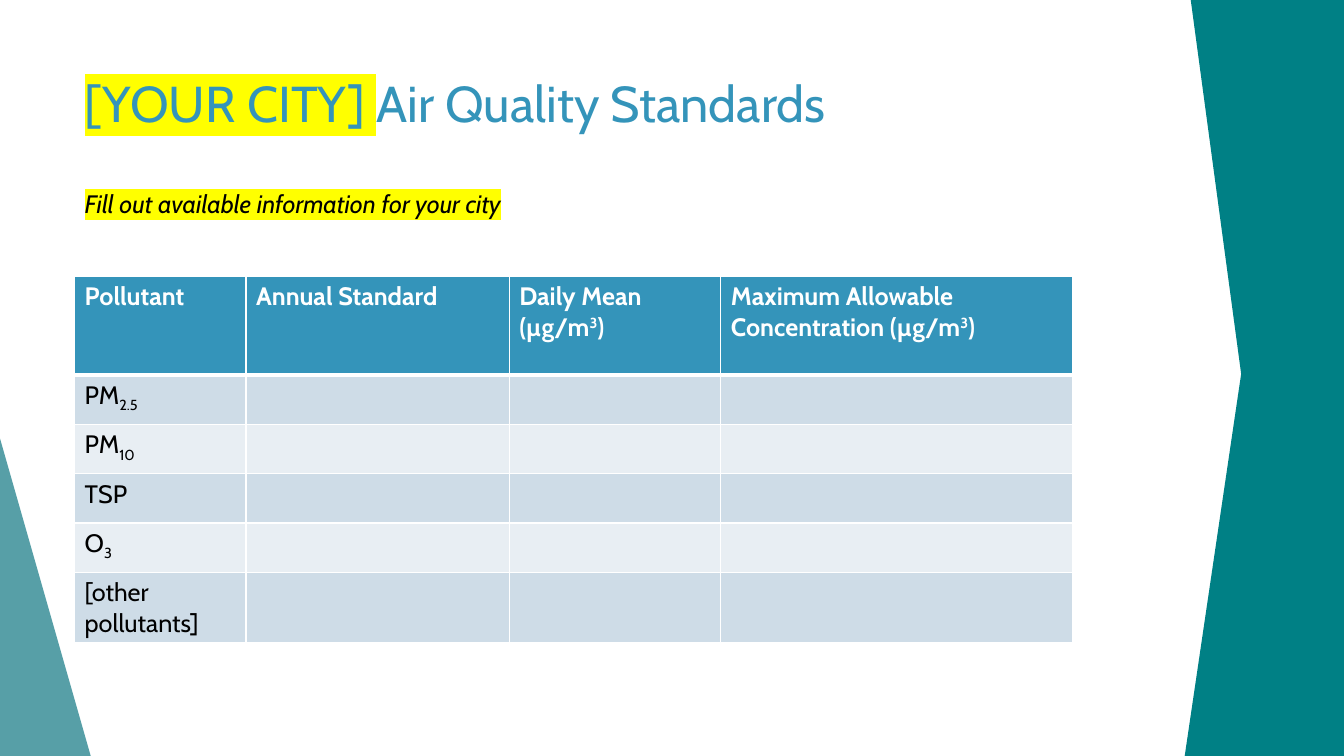
from lxml.etree import SubElement
from pptx import Presentation
from pptx.dml.color import RGBColor
from pptx.enum.shapes import MSO_SHAPE
from pptx.enum.text import MSO_ANCHOR, MSO_AUTO_SIZE, PP_ALIGN
from pptx.oxml.ns import qn
from pptx.util import Inches, Pt

COLORS = {"blue": "3494BA", "teal": "008085", "sea": "3A8F98", "white": "FFFFFF",
          "black": "000000", "yellow": "FFFF00", "dark_band": "CEDCE7",
          "light_band": "E8EEF3"}
FONT = "Cabin"
WIDTH, HEIGHT = 13.33, 7.5
MARGIN = 0.74
SUPER, SUB = 30, -25
COLUMNS = [1.7, 2.61, 2.1, 3.49]
HEADER_HEIGHT, ROW_HEIGHT = 0.98, 0.49
HEADERS = [
    [("Pollutant", 0)],
    [("Annual Standard", 0)],
    [("Daily Mean (µg/m", 0), ("3", SUPER), (")", 0)],
    [("Maximum Allowable Concentration (µg/m", 0), ("3", SUPER), (")", 0)],
]
POLLUTANTS = [
    [("PM", 0), ("2.5", SUB)],
    [("PM", 0), ("10", SUB)],
    [("TSP", 0)],
    [("O", 0), ("3", SUB)],
    [("[other pollutants]", 0)],
]


def color(name):
    return RGBColor.from_string(COLORS[name])


def add_span(para, text, size, ink, bold=False, italic=False, mark=None, baseline=0):
    span = para.add_run()
    span.text = text
    font = span.font
    font.size, font.bold, font.italic = Pt(size), bold, italic
    font.color.rgb = color(ink)
    properties = span._r.get_or_add_rPr()
    if mark:
        highlight = SubElement(properties, qn("a:highlight"))
        SubElement(highlight, qn("a:srgbClr"), val=COLORS[mark])
    if baseline:
        properties.set("baseline", str(baseline * 1000))
    font.name = FONT


def paint(shape, name, opacity=100):
    shape.shadow.inherit = False
    shape.fill.solid()
    shape.fill.fore_color.rgb = color(name)
    shape.line.fill.background()
    if opacity < 100:
        tint = shape.element.spPr.find(".//" + qn("a:srgbClr"))
        SubElement(tint, qn("a:alpha"), val=str(opacity * 1000))


def add_side_shapes(page):
    """Place the triangle and the right-hand band behind the content."""
    top = 4.28
    triangle = page.shapes.add_shape(
        MSO_SHAPE.RIGHT_TRIANGLE, Inches(-0.02), Inches(top),
        Inches(0.92), Inches(HEIGHT - top))
    paint(triangle, "sea", opacity=85)
    outline = page.shapes.build_freeform(Inches(WIDTH), 0, scale=1.0)
    corners = [(WIDTH, HEIGHT), (11.75, HEIGHT), (12.31, 3.71), (11.81, 0)]
    outline.add_line_segments([(Inches(x), Inches(y)) for x, y in corners])
    band = outline.convert_to_shape()
    paint(band, "teal")
    for place, shape in enumerate((triangle, band), start=2):
        page.shapes.element.insert(place, shape.element)


def add_title(page, left, top, width, height):
    title = page.shapes.title
    title.left, title.top = Inches(left), Inches(top)
    title.width, title.height = Inches(width), Inches(height)
    frame = title.text_frame
    frame.vertical_anchor = MSO_ANCHOR.TOP
    frame.auto_size = MSO_AUTO_SIZE.NONE
    para = frame.paragraphs[0]
    para.alignment = PP_ALIGN.LEFT
    add_span(para, "[YOUR CITY] ", 36, "blue", mark="yellow")
    add_span(para, "Air Quality Standards", 36, "blue")


def add_instruction(page, left, top, width, height):
    box = page.shapes.add_textbox(Inches(left), Inches(top), Inches(width), Inches(height))
    box.text_frame.word_wrap = True
    add_span(box.text_frame.paragraphs[0], "Fill out available information for your city",
             18, "black", italic=True, mark="yellow")


def style_cell(cell, fill, bottom_width):
    properties = cell._tc.get_or_add_tcPr()
    for side, points in (("L", 1), ("R", 1), ("T", 1), ("B", bottom_width)):
        border = SubElement(properties, qn("a:ln" + side), w=str(Pt(points)))
        paint_fill = SubElement(border, qn("a:solidFill"))
        SubElement(paint_fill, qn("a:srgbClr"), val=COLORS["white"])
    cell.fill.solid()
    cell.fill.fore_color.rgb = color(fill)


def add_standards_table(page, left, top):
    rows = [HEADERS] + [[name, [], [], []] for name in POLLUTANTS]
    height = HEADER_HEIGHT + ROW_HEIGHT * len(POLLUTANTS)
    table = page.shapes.add_table(
        len(rows), len(COLUMNS), Inches(left), Inches(top),
        Inches(sum(COLUMNS)), Inches(height)).table
    table.horz_banding = False
    for column, width in zip(table.columns, COLUMNS):
        column.width = Inches(width)
    for r, row in enumerate(rows):
        header = r == 0
        table.rows[r].height = Inches(HEADER_HEIGHT if header else ROW_HEIGHT)
        fill = "blue" if header else ("light_band", "dark_band")[r % 2]
        for c, spans in enumerate(row):
            cell = table.cell(r, c)
            style_cell(cell, fill, 3 if header else 1)
            for text, baseline in spans:
                add_span(cell.text_frame.paragraphs[0], text, 18,
                         "white" if header else "black", bold=header, baseline=baseline)


def main():
    deck = Presentation()
    deck.slide_width, deck.slide_height = Inches(WIDTH), Inches(HEIGHT)
    page = deck.slides.add_slide(deck.slide_layouts.get_by_name("Title Only"))
    add_side_shapes(page)
    add_title(page, MARGIN, 0.67, 11.92, 1.44)
    add_instruction(page, MARGIN, 1.82, 5.7, 0.4)
    add_standards_table(page, MARGIN, 2.74)
    deck.save("out.pptx")


if __name__ == "__main__":
    main()
